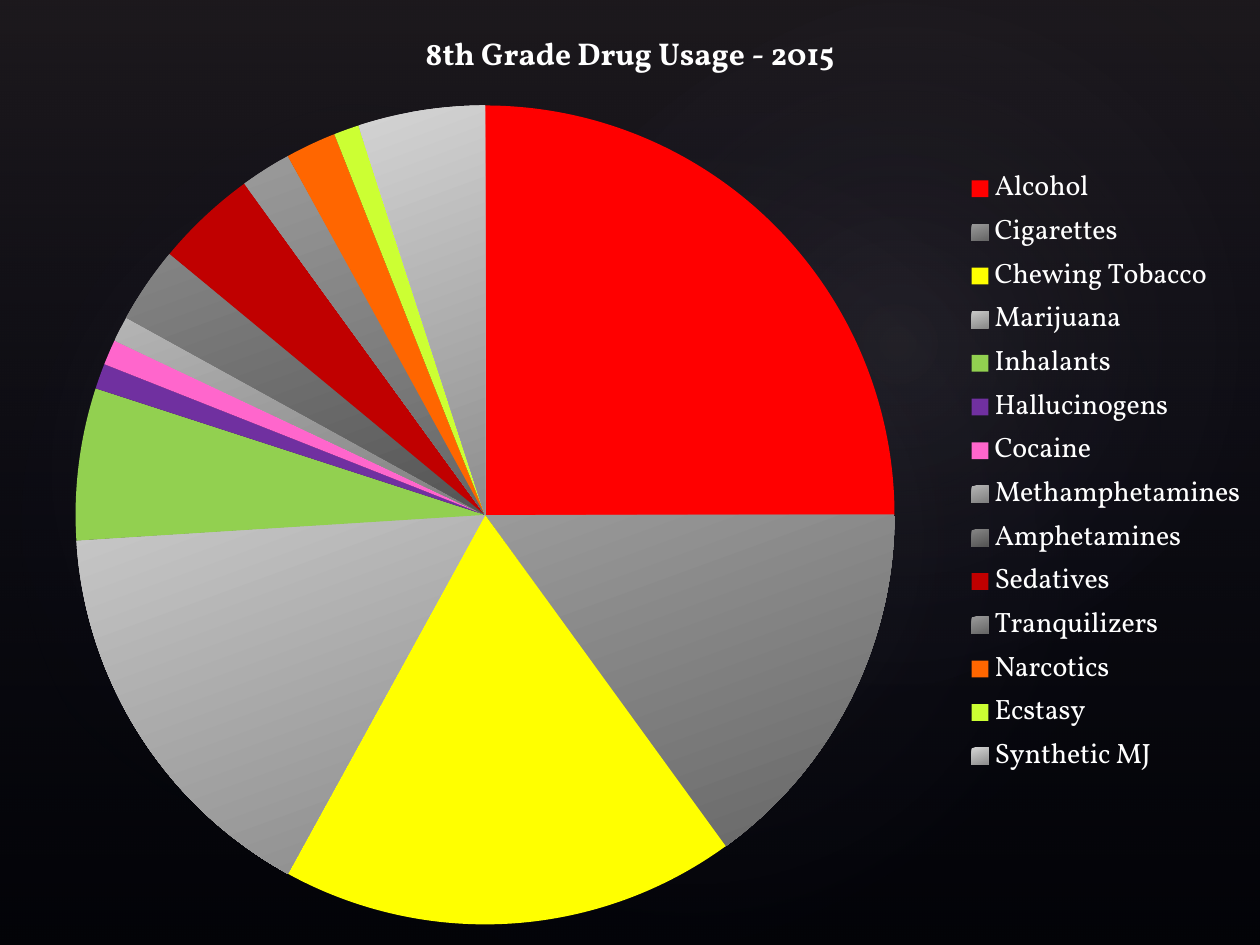
"""Build the slide with the pie chart of eighth grade drug usage."""
from dataclasses import dataclass
from typing import Any

from lxml import etree
from pptx import Presentation
from pptx import util as u
from pptx.chart import data
from pptx.dml import color
from pptx.enum import chart as ch, shapes
from pptx.oxml import ns

FONT = "Vollkorn"
TITLE = "8th Grade Drug Usage - 2015"
NAVY = "242852"


@dataclass
class Stop:
    hue: str
    pos: float
    alpha: int


@dataclass
class Glow:
    left: float
    top: float
    width: float
    height: float
    turn: float
    alpha: int


@dataclass
class Slice:
    name: str
    value: int
    hue: str
    end: str = ""


GLOWS = [
    Glow(108, 82, 570, 449, 328.7, 7),
    Glow(-21.6, 92.2, 436.3, 352.8, 294.3, 8),
    Glow(257.8, 9.4, 510.5, 374.4, 328.7, 8),
]
SLICES = [
    Slice("Alcohol", 25, "FF0000"),
    Slice("Cigarettes", 15, "9A9A9A", "666666"),
    Slice("Chewing Tobacco", 18, "FFFF00"),
    Slice("Marijuana", 16, "C8C8C8", "8A8A8A"),
    Slice("Inhalants", 6, "92D050"),
    Slice("Hallucinogens", 1, "7030A0"),
    Slice("Cocaine", 1, "FF66CC"),
    Slice("Methamphetamines", 1, "B4B4B4", "808080"),
    Slice("Amphetamines", 3, "858585", "555555"),
    Slice("Sedatives", 4, "C00000"),
    Slice("Tranquilizers", 2, "9A9A9A", "666666"),
    Slice("Narcotics", 2, "FF6600"),
    Slice("Ecstasy", 1, "CCFF33"),
    Slice("Synthetic MJ", 5, "D4D4D4", "8E8E8E"),
]


def rgb(hue: str) -> color.RGBColor:
    """Turn a hex string into a colour."""
    return color.RGBColor.from_string(hue)


def node(host: Any, tag: str, **attrs: str) -> Any:
    """Append a child element with the given attributes."""
    return etree.SubElement(host, ns.qn(tag), attrs)


def blend(fill: Any, hues: list[str], angle: float) -> None:
    """Fill with a linear blend of two colours."""
    fill.gradient()
    fill.gradient_angle = angle
    for stop, hue in zip(fill.gradient_stops, hues):
        stop.color.rgb = rgb(hue)


def veil(shape: Any, stops: list[Stop], angle: float = 270) -> None:
    """Give a shape a see-through blend and no outline."""
    shape.shadow.inherit = False
    shape.line.fill.background()
    blend(shape.fill, [s.hue for s in stops], angle)
    for mark, stop in zip(shape.fill.gradient_stops, stops):
        mark.position = stop.pos
    for tint, stop in zip(shape._element.spPr.iter(ns.qn("a:srgbClr")), stops):
        node(tint, "a:alpha", val=str(stop.alpha * 1000))


def shine(slide: Any, glow: Glow) -> None:
    """Draw a tilted glow that fades out from its centre."""
    box = [u.Pt(n) for n in (glow.left, glow.top, glow.width, glow.height)]
    oval = slide.shapes.add_shape(shapes.MSO_SHAPE.OVAL, *box)
    oval.rotation = glow.turn
    veil(oval, [Stop("C4BCC6", 0, glow.alpha), Stop(NAVY, 0.58, 0)])
    grad = oval._element.spPr.find(ns.qn("a:gradFill"))
    grad.remove(grad.find(ns.qn("a:lin")))
    ring = node(grad, "a:path", path="circle")
    node(ring, "a:fillToRect", l="50000", t="50000", r="50000", b="50000")


def place(plot: Any, x: float, y: float, w: float, h: float) -> None:
    """Fix the plot area as shares of the chart."""
    old = plot.find(ns.qn("c:layout"))
    if old is not None:
        plot.remove(old)
    frame = etree.Element(ns.qn("c:layout"))
    plot.insert(0, frame)
    spot = node(frame, "c:manualLayout")
    node(spot, "c:layoutTarget", val="inner")
    for key in ("xMode", "yMode"):
        node(spot, f"c:{key}", val="edge")
    for key, share in zip("xywh", (x, y, w, h)):
        node(spot, f"c:{key}", val=str(share))


def style(font: Any, size: float, bold: bool = False) -> None:
    """Set white text in the slide's font."""
    font.name = FONT
    font.size = u.Pt(size)
    font.bold = bold
    font.color.rgb = rgb("FFFFFF")


def draw(slide: Any, wide: int, high: int) -> None:
    """Add the pie chart with its title and legend."""
    table = data.CategoryChartData()
    table.categories = [s.name for s in SLICES]
    table.add_series(TITLE, [s.value for s in SLICES])
    kind = ch.XL_CHART_TYPE.PIE
    pie = slide.shapes.add_chart(kind, 0, 0, wide, high, table).chart
    style(pie.font, 10)
    pie.has_title = True
    run = pie.chart_title.text_frame.paragraphs[0].add_run()
    run.text = TITLE
    style(run.font, 18, True)
    pie.chart_title.include_in_layout = False
    pie.has_legend = True
    pie.legend.position = ch.XL_LEGEND_POSITION.RIGHT
    pie.legend.include_in_layout = False
    style(pie.legend.font, 16)
    pie.plots[0].vary_by_categories = True
    for i, part in enumerate(SLICES):
        look = pie.plots[0].series[0].points[i].format
        look.line.fill.background()
        if part.end:
            blend(look.fill, [part.hue, part.end], 290)
        else:
            look.fill.solid()
            look.fill.fore_color.rgb = rgb(part.hue)
    place(pie._chartSpace.chart.plotArea, 0.06, 0.11, 0.65, 0.87)


def main() -> None:
    """Build and save the slide."""
    deck = Presentation()
    deck.slide_width, deck.slide_height = u.Pt(720), u.Pt(540)
    slide = deck.slides.add_slide(deck.slide_layouts[6])
    back = slide.background.fill
    back.solid()
    back.fore_color.rgb = rgb("000000")
    size = deck.slide_width, deck.slide_height
    shade = slide.shapes.add_shape(shapes.MSO_SHAPE.RECTANGLE, 0, 0, *size)
    veil(shade, [Stop("504652", 0, 36), Stop(NAVY, 1, 10)])
    for glow in GLOWS:
        shine(slide, glow)
    draw(slide, *size)
    deck.save("out.pptx")


if __name__ == "__main__":
    main()
